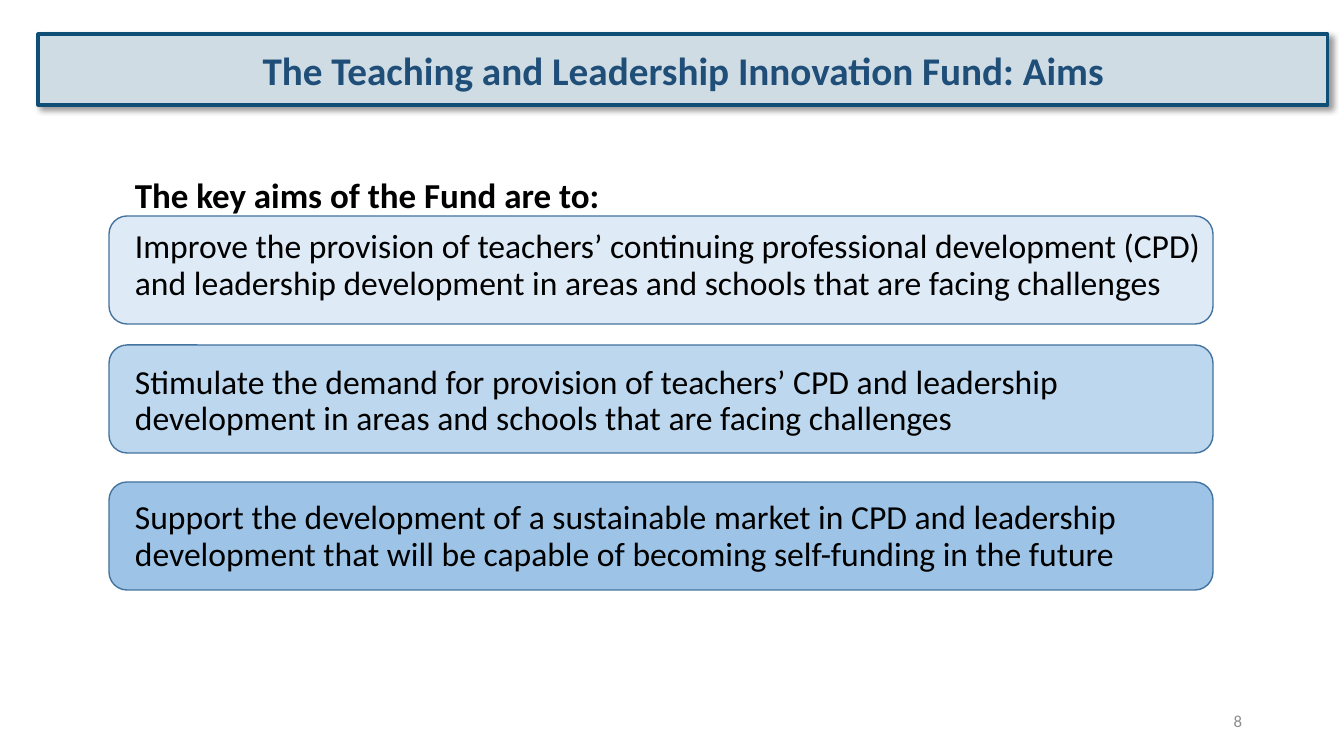
from lxml import etree
from pptx import Presentation
from pptx import util as u
from pptx.dml.color import RGBColor
from pptx.enum import shapes, text
from pptx.oxml.ns import qn

EMU_PER_PX = 914400 / 100.8
COLORS = {
    "banner": "CFDCE3", "banner_line": "104F75", "title": "1F4E79",
    "box_line": "43739E", "body": "000000", "number": "8C8C8C",
    "light": "DEEBF7", "medium": "BDD7EE", "strong": "9DC3E6",
}
# Box fill, box top, space before the text in points, text
AIMS = [
    ("light", 216, 10, "Improve the provision of teachers’ continuing professional "
     "development (CPD) and leadership development in areas and schools that are "
     "facing challenges"),
    ("medium", 345, 45, "Stimulate the demand for provision of teachers’ CPD and "
     "leadership development in areas and schools that are facing challenges"),
    ("strong", 482, 45, "Support the development of a sustainable market in CPD and "
     "leadership development that will be capable of becoming self-funding in the future"),
]


def px(n):
    return u.Emu(round(n * EMU_PER_PX))


def rgb(name):
    return RGBColor.from_string(COLORS[name])


def apply(obj, values):
    for name, value in values.items():
        setattr(obj, name, value)


def add_box(s, kind, at, fill, line, width):
    sp = s.shapes.add_shape(kind, *map(px, at))
    sp.shadow.inherit = False
    sp.fill.solid()
    sp.fill.fore_color.rgb = rgb(fill)
    sp.line.color.rgb = rgb(line)
    sp.line.width = u.Pt(width)
    return sp


def add_text_box(s, at, anchor):
    tf = s.shapes.add_textbox(*map(px, at)).text_frame
    apply(tf, {"word_wrap": True, "vertical_anchor": anchor})
    return tf


def write(p, words, color, size, bold=False, **paragraph_format):
    apply(p, paragraph_format)
    r = p.add_run()
    r.text = words
    apply(r.font, {"name": "Calibri", "size": u.Pt(size), "bold": bold})
    r.font.color.rgb = rgb(color)


def add_shadow(sp):
    effects = sp._element.spPr.find(qn("a:effectLst"))
    shadow = etree.SubElement(effects, qn("a:outerShdw"), blurRad=str(u.Pt(4)),
                              dist=str(u.Pt(3)), dir="2700000", algn="tl", rotWithShape="0")
    color = etree.SubElement(shadow, qn("a:srgbClr"), val="000000")
    etree.SubElement(color, qn("a:alpha"), val="40000")


def main():
    prs = Presentation()
    apply(prs, {"slide_width": px(1344), "slide_height": px(756)})
    s = prs.slides.add_slide(prs.slide_layouts[6])

    # Boxes behind the aims
    for fill, top, _, _ in AIMS:
        add_box(s, shapes.MSO_SHAPE.ROUNDED_RECTANGLE, (109, top, 1104, 108),
                fill, "box_line", 1)

    # Heading and aims
    tf = add_text_box(s, (125, 173, 1104, 374), text.MSO_ANCHOR.TOP)
    write(tf.paragraphs[0], "The key aims of the Fund are to:", "body", 25, True,
          line_spacing=0.9)
    for _, _, space, aim in AIMS:
        write(tf.add_paragraph(), aim, "body", 24, line_spacing=0.9, space_before=u.Pt(space))

    # Title banner
    sp = add_box(s, shapes.MSO_SHAPE.RECTANGLE, (38, 34, 1290, 71),
                 "banner", "banner_line", 2.25)
    add_shadow(sp)
    sp.text_frame.vertical_anchor = text.MSO_ANCHOR.MIDDLE
    write(sp.text_frame.paragraphs[0], "The Teaching and Leadership Innovation Fund: Aims",
          "title", 28, True, alignment=text.PP_ALIGN.CENTER)

    # Slide number
    tf = add_text_box(s, (950, 701, 302, 40), text.MSO_ANCHOR.MIDDLE)
    write(tf.paragraphs[0], "8", "number", 12, alignment=text.PP_ALIGN.RIGHT)

    prs.save("out.pptx")


if __name__ == "__main__":
    main()
